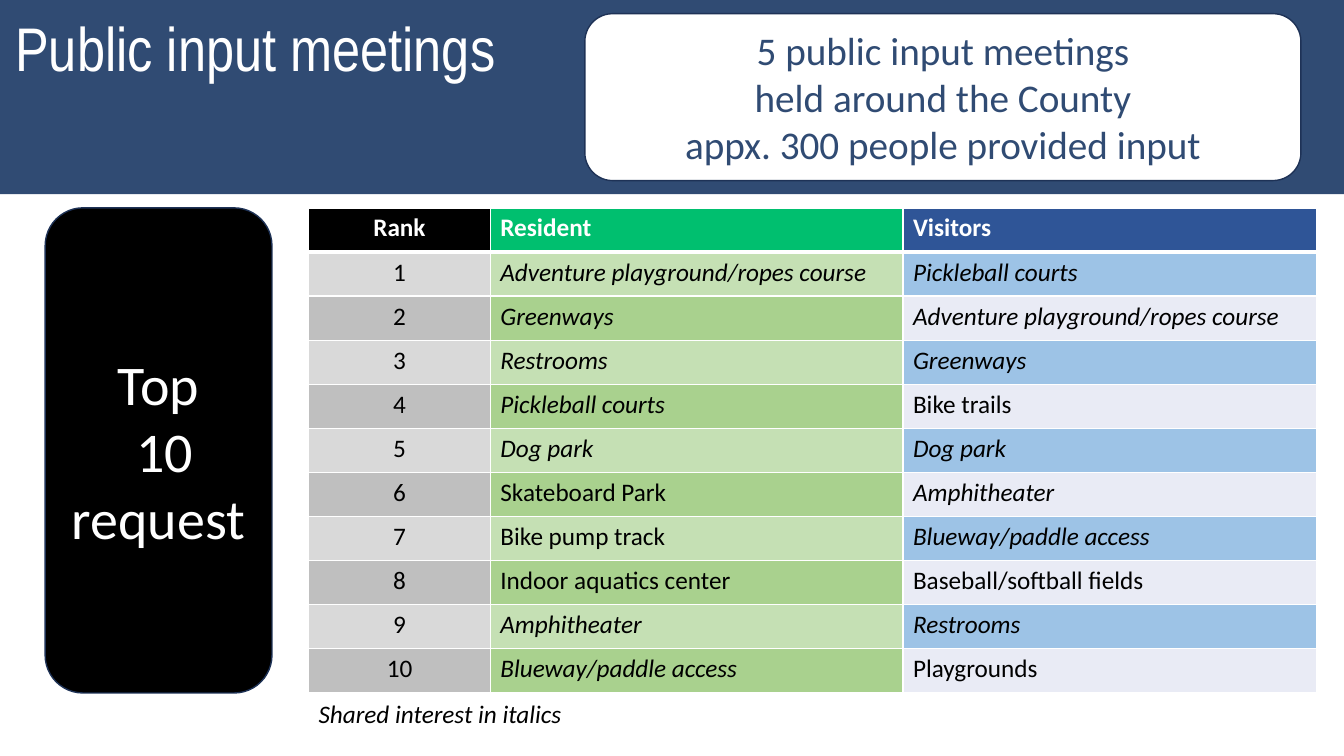
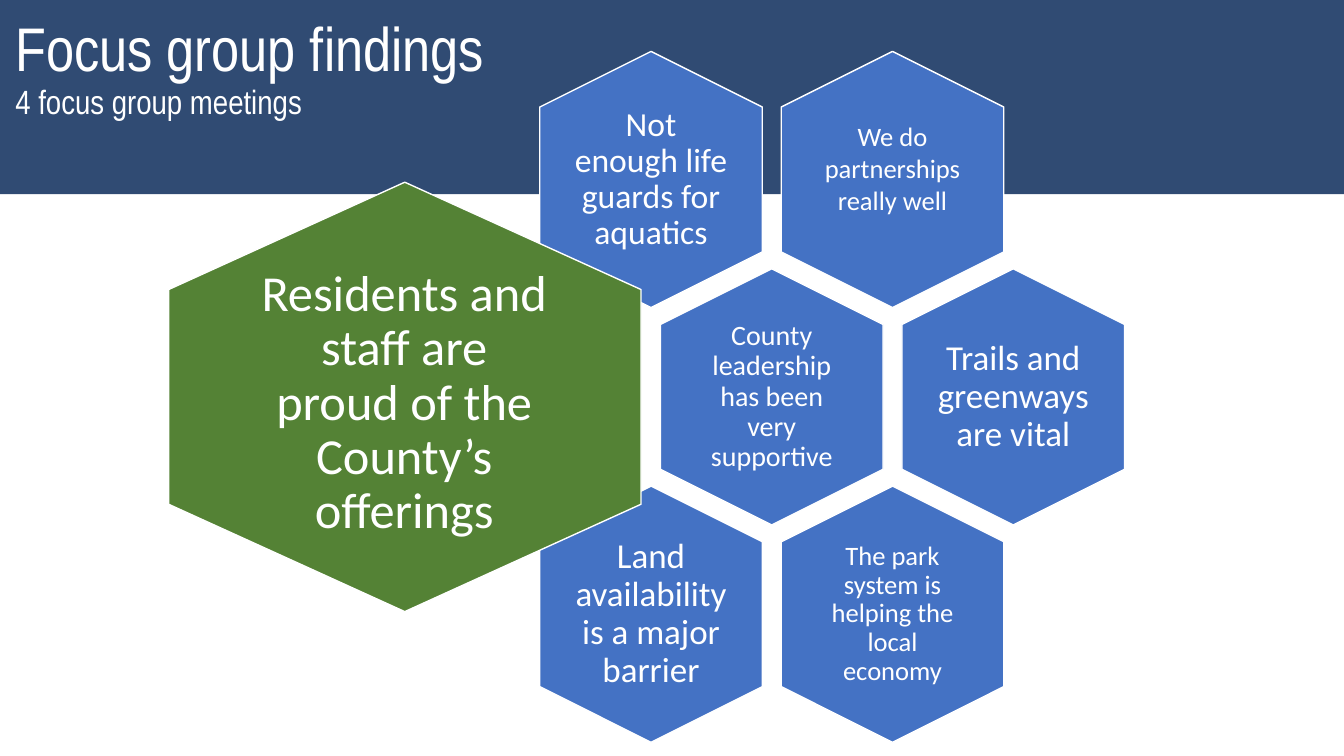
import pptx
import pptx.dml.color
import pptx.enum.shapes
import pptx.enum.text
import pptx.oxml
import pptx.util

# Shared look
PX = 9525
WIDTH, HEIGHT, BAND_HEIGHT = 1280, 720, 185
NAVY, OUTLINE, WHITE, BLACK = "304B73", "1E3256", "FFFFFF", "000000"
BLUE, GREEN = "4472C4", "548235"
TITLE_FONT, BODY_FONT = "Arial Narrow", "Calibri"
SHAPE = pptx.enum.shapes.MSO_SHAPE
ANCHOR = pptx.enum.text.MSO_ANCHOR
ALIGN = pptx.enum.text.PP_ALIGN

# Ranked requests: header fill, then fills of odd and even rows
HEADER_FILLS = (BLACK, "00BF6F", "2F5597")
ROW_FILLS = (("D9D9D9", "C5E0B4", "9DC3E6"), ("BFBFBF", "A9D18E", "E9EBF5"))
COLUMN_WIDTHS = (173, 393, 394)
ROW_HEIGHT = 42
RESIDENT_REQUESTS = (
    "Adventure playground/ropes course", "Greenways", "Restrooms",
    "Pickleball courts", "Dog park", "Skateboard Park", "Bike pump track",
    "Indoor aquatics center", "Amphitheater", "Blueway/paddle access",
)
VISITOR_REQUESTS = (
    "Pickleball courts", "Adventure playground/ropes course", "Greenways",
    "Bike trails", "Dog park", "Amphitheater", "Blueway/paddle access",
    "Baseball/softball fields", "Restrooms", "Playgrounds",
)

# Findings by honeycomb row: text, size, inset, line spacing, text shift
FINDINGS = (
    (("Not enough life guards for aquatics", 24, 0, 0.9, 0),
     ("We do partnerships really well", 19, 8, 1, -11)),
    (("County leadership has been very supportive", 20, 8, 0.9, 0),
     ("Trails and greenways are vital", 25, 0, 0.9, 0)),
    (("Land availability is a major barrier", 25, 0, 0.9, 0),
     ("The park system is helping the local economy", 19, 8, 0.9, 0)),
)


def px(length):
    return pptx.util.Emu(length * PX)


def box(left, top, width, height):
    return px(left), px(top), px(width), px(height)


def color(hex_string):
    return pptx.dml.color.RGBColor.from_string(hex_string)


def style_font(font, size, fill, name=BODY_FONT, bold=False, italic=False):
    font.size = pptx.util.Pt(size)
    font.name = name
    font.bold = bold
    font.italic = italic
    font.color.rgb = color(fill)


def write(frame, text, size, fill, align=ALIGN.CENTER, anchor=ANCHOR.MIDDLE,
          spacing=1, inset=None, name=BODY_FONT, italic=False):
    """Fill a text frame with one paragraph; \\v breaks the line."""
    frame.word_wrap = True
    frame.auto_size = pptx.enum.text.MSO_AUTO_SIZE.NONE
    frame.vertical_anchor = anchor
    if inset is not None:
        frame.margin_left = frame.margin_right = px(inset)
        frame.margin_top = frame.margin_bottom = px(inset)
    paragraph = frame.paragraphs[0]
    paragraph.text = text
    paragraph.alignment = align
    paragraph.line_spacing = spacing
    for run in paragraph.runs:
        style_font(run.font, size, fill, name, italic=italic)
    return paragraph


def add_block(slide, preset, place, fill, line=None):
    block = slide.shapes.add_shape(preset, *box(*place))
    block.shadow.inherit = False
    block.fill.solid()
    block.fill.fore_color.rgb = color(fill)
    if line:
        block.line.color.rgb = color(line)
        block.line.width = pptx.util.Pt(1)
    else:
        block.line.fill.background()
    return block


def add_banded_slide(deck, heading, subheading=None):
    """Start a slide with the navy band and its title."""
    slide = deck.slides.add_slide(deck.slide_layouts[5])
    band = add_block(slide, SHAPE.RECTANGLE, (0, 0, WIDTH, BAND_HEIGHT), NAVY)
    slide.shapes.element.insert(2, band.element)  # behind the title
    title = slide.shapes.title
    title.left, title.top, title.width, title.height = box(5, 13, 534, 134)
    text = f"{heading}\v{subheading}" if subheading else heading
    paragraph = write(title.text_frame, text, 44, WHITE, ALIGN.LEFT,
                      ANCHOR.TOP, 0.9, name=TITLE_FONT)
    for subheading_run in paragraph.runs[1:]:
        subheading_run.font.size = pptx.util.Pt(24)
    return slide


def add_rounded_box(slide, place, fill, text, size, text_fill):
    block = add_block(slide, SHAPE.ROUNDED_RECTANGLE, place, fill, OUTLINE)
    write(block.text_frame, text, size, text_fill)


def add_label(slide, place, text, size, fill, **layout):
    label = slide.shapes.add_textbox(*box(*place))
    write(label.text_frame, text, size, fill, **layout)


def set_borders(cell, bottom_points):
    properties = cell._tc.get_or_add_tcPr()
    for side, points in (("L", 1), ("R", 1), ("T", 1), ("B", bottom_points)):
        properties.append(pptx.oxml.parse_xml(
            f'<a:ln{side} xmlns:a="http://schemas.openxmlformats.org/'
            f'drawingml/2006/main" w="{points * 12700}"><a:solidFill>'
            f'<a:srgbClr val="{WHITE}"/></a:solidFill></a:ln{side}>'))


def add_request_table(slide, left, top):
    ranks = range(1, len(RESIDENT_REQUESTS) + 1)
    rows = [("Rank", "Resident", "Visitors"),
            *zip(map(str, ranks), RESIDENT_REQUESTS, VISITOR_REQUESTS)]
    shared = set(RESIDENT_REQUESTS) & set(VISITOR_REQUESTS)
    place = box(left, top, sum(COLUMN_WIDTHS), ROW_HEIGHT * len(rows))
    table = slide.shapes.add_table(len(rows), len(COLUMN_WIDTHS), *place).table
    for column, width in zip(table.columns, COLUMN_WIDTHS):
        column.width = px(width)
    for row_number, row in enumerate(rows):
        is_header = row_number == 0
        fills = HEADER_FILLS if is_header else ROW_FILLS[(row_number - 1) % 2]
        table.rows[row_number].height = px(ROW_HEIGHT)
        for column_number, text in enumerate(row):
            cell = table.cell(row_number, column_number)
            set_borders(cell, 3 if is_header else 1)
            cell.fill.solid()
            cell.fill.fore_color.rgb = color(fills[column_number])
            paragraph = cell.text_frame.paragraphs[0]
            paragraph.text = text
            paragraph.alignment = ALIGN.LEFT if column_number else ALIGN.CENTER
            style_font(paragraph.runs[0].font, 18,
                       WHITE if is_header else BLACK,
                       bold=is_header, italic=text in shared)


def add_hexagon(slide, center, size, label_size, fill, finding):
    """Draw an upright hexagon, size being its width and height."""
    (x, y), (width, height), (label_width, label_height) = center, size, label_size
    text, points, inset, spacing, shift = finding
    # The preset points sideways, so it is turned by a quarter
    hexagon = add_block(slide, SHAPE.HEXAGON,
                        (x - height // 2, y - width // 2, height, width),
                        fill, WHITE)
    hexagon.rotation = 90
    add_label(slide, (x - label_width // 2, y - label_height // 2 + shift,
                      label_width, label_height),
              text, points, WHITE, spacing=spacing, inset=inset)


def build_meetings(deck):
    slide = add_banded_slide(deck, "Public input meetings")
    add_rounded_box(slide, (557, 13, 682, 159), WHITE,
                    "5 public input meetings\vheld around the County\v"
                    "appx. 300 people provided input", 28, NAVY)
    add_rounded_box(slide, (43, 198, 216, 462), BLACK,
                    "Top\v 10 request", 40, WHITE)
    add_request_table(slide, 294, 198)
    add_label(slide, (294, 660, 536, 38), "Shared interest in italics", 18,
              BLACK, align=ALIGN.LEFT, anchor=ANCHOR.TOP, italic=True)


def build_findings(deck):
    slide = add_banded_slide(deck, "Focus group findings",
                             "4 focus group meetings")
    # Honeycomb: the middle row is moved right by half a step
    step_x, step_y = 230, 207
    for row_number, row in enumerate(FINDINGS):
        row_left = 620 + row_number % 2 * step_x // 2
        for column_number, finding in enumerate(row):
            center = (row_left + column_number * step_x,
                      171 + row_number * step_y)
            add_hexagon(slide, center, (212, 244), (146, 168), BLUE, finding)
    add_hexagon(slide, (385, 378), (450, 409), (276, 269), GREEN,
                ("Residents and staff are proud of the County’s offerings",
                 36, 0, 0.9, 6))


def main():
    deck = pptx.Presentation()
    deck.slide_width, deck.slide_height = px(WIDTH), px(HEIGHT)
    build_meetings(deck)
    build_findings(deck)
    deck.save("out.pptx")


if __name__ == "__main__":
    main()
